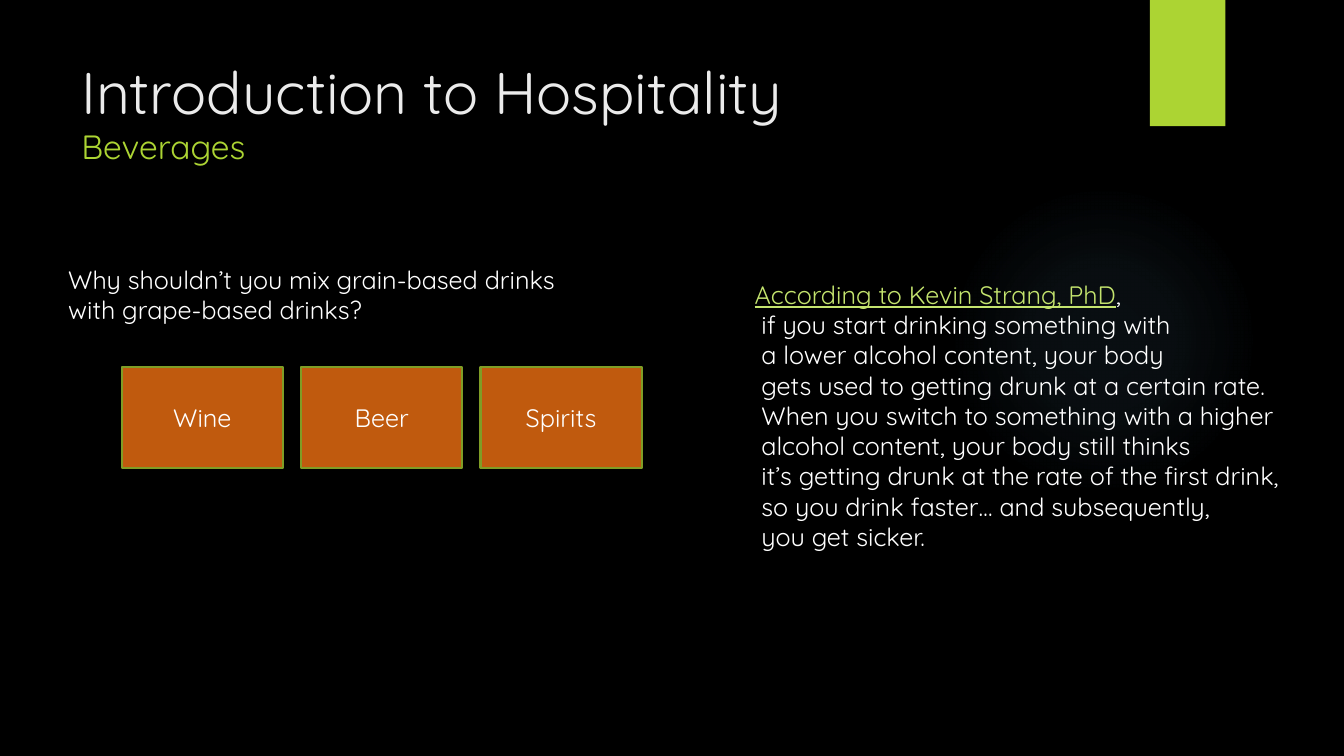
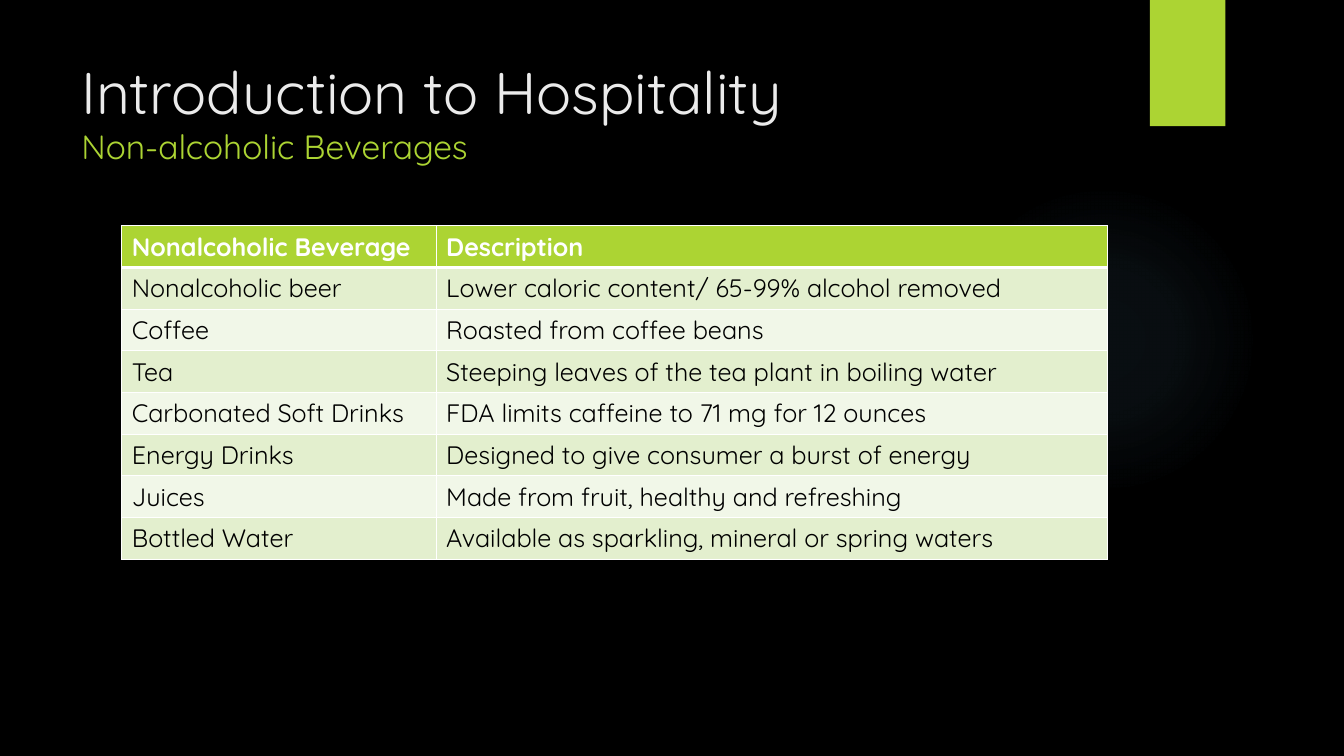
from lxml import etree
from pptx import Presentation
from pptx import util as u
from pptx.dml.color import RGBColor
from pptx.enum import shapes, text
from pptx.oxml import parse_xml
from pptx.oxml.ns import nsdecls, qn

# Shared look
FONT = "Quicksand"
BLACK, WHITE, TITLE = "000000", "FFFFFF", "EBEBEB"
GREEN, LINK, GLOW = "ACD433", "C4E46E", "7AC4F0"
ORANGE, OUTLINE = "C05A0E", "7F9D26"
BANDS = ["E3EFCE", "F1F7E8"]
BODY = 18

# Content
COURSE = "Introduction to Hospitality"
QUESTION = ["Why shouldn’t you mix grain-based drinks", "with grape-based drinks?"]
DRINKS = ["Wine", "Beer", "Spirits"]
SOURCE = "According to Kevin Strang, PhD"
ANSWER = [
    "if you start drinking something with",
    "a lower alcohol content, your body",
    "gets used to getting drunk at a certain rate.",
    "When you switch to something with a higher",
    "alcohol content, your body still thinks",
    "it’s getting drunk at the rate of the first drink,",
    "so you drink faster… and subsequently,",
    "you get sicker.",
]
BEVERAGES = [
    ("Nonalcoholic Beverage", "Description"),
    ("Nonalcoholic beer", "Lower caloric content/ 65-99% alcohol removed"),
    ("Coffee", "Roasted from coffee beans"),
    ("Tea", "Steeping leaves of the tea plant in boiling water"),
    ("Carbonated Soft Drinks", "FDA limits caffeine to 71 mg for 12 ounces"),
    ("Energy Drinks", "Designed to give consumer a burst of energy"),
    ("Juices", "Made from fruit, healthy and refreshing"),
    ("Bottled Water", "Available as sparkling, mineral or spring waters"),
]


def rgb(color):
    return RGBColor.from_string(color)


def cm(*lengths):
    return [u.Cm(length) for length in lengths]


def add_run(p, words, color=WHITE, size=BODY, bold=False, underline=False):
    r = p.add_run()
    r.text = words
    r.font.name, r.font.size = FONT, u.Pt(size)
    r.font.bold, r.font.underline = bold, underline
    r.font.color.rgb = rgb(color)


def add_text(s, *box):
    tf = s.shapes.add_textbox(*cm(*box)).text_frame
    tf.word_wrap = True
    return tf


def add_box(s, kind, box, fill=None, line=None):
    sp = s.shapes.add_shape(kind, *cm(*box))
    sp.shadow.inherit = False
    if fill:
        sp.fill.solid()
        sp.fill.fore_color.rgb = rgb(fill)
    if line:
        sp.line.color.rgb = rgb(line)
        sp.line.width = u.Pt(1.5)
    else:
        sp.line.fill.background()
    return sp


def add_glow(s):
    sp = add_box(s, shapes.MSO_SHAPE.OVAL, (23.9, 4.65, 7.82, 7.82))
    stops = "".join(
        f'<a:gs pos="{pos * 1000}"><a:srgbClr val="{GLOW}">'
        f'<a:alpha val="{alpha * 1000}"/></a:srgbClr></a:gs>'
        for pos, alpha in [(0, 7), (36, 6), (69, 0)])
    gradient = parse_xml(
        f'<a:gradFill {nsdecls("a")}><a:gsLst>{stops}</a:gsLst><a:path path="circle">'
        '<a:fillToRect l="50000" t="50000" r="50000" b="50000"/></a:path></a:gradFill>')
    sp.element.spPr.find(qn("a:prstGeom")).addnext(gradient)


def add_slide(prs, subtitle):
    s = prs.slides.add_slide(prs.slide_layouts[6])
    s.background.fill.solid()
    s.background.fill.fore_color.rgb = rgb(BLACK)
    add_glow(s)
    add_box(s, shapes.MSO_SHAPE.RECTANGLE, (28.98, 0, 1.9, 3.18), GREEN)
    p = add_text(s, 1.8, 1.27, 26.14, 3.89).paragraphs[0]
    add_run(p, COURSE, TITLE, 42)
    p.add_line_break()
    add_run(p, subtitle, GREEN, 24)
    return s


def set_borders(cell, top, bottom):
    tcPr = cell._tc.get_or_add_tcPr()
    for side, width in [("L", 1), ("R", 1), ("T", top), ("B", bottom)]:
        ln = etree.SubElement(tcPr, qn(f"a:ln{side}"), w=str(u.Pt(width)))
        fill = etree.SubElement(ln, qn("a:solidFill"))
        etree.SubElement(fill, qn("a:srgbClr"), val=WHITE)


def build_mixing(prs):
    s = add_slide(prs, "Beverages")

    # Row of drinks
    left, width, gap = 3.07, 4.06, 0.46
    for i, drink in enumerate(DRINKS):
        sp = add_box(s, shapes.MSO_SHAPE.RECTANGLE,
                     (left + i * (width + gap), 9.25, width, 2.54), ORANGE, OUTLINE)
        tf = sp.text_frame
        tf.vertical_anchor = text.MSO_ANCHOR.MIDDLE
        p = tf.paragraphs[0]
        p.alignment = text.PP_ALIGN.CENTER
        add_run(p, drink)

    # Answer, set in slightly below its source
    tf = add_text(s, 18.77, 6.91, 14.4, 7.19)
    add_run(tf.paragraphs[0], SOURCE, LINK, underline=True)
    add_run(tf.paragraphs[0], ",")
    for line in ANSWER:
        p = tf.add_paragraph()
        p._p.get_or_add_pPr().set("marL", str(u.Cm(0.17)))
        add_run(p, line)

    # Question
    tf = add_text(s, 1.47, 6.53, 13.31, 1.8)
    for i, line in enumerate(QUESTION):
        add_run(tf.add_paragraph() if i else tf.paragraphs[0], line)


def build_table(prs):
    s = add_slide(prs, "Non-alcoholic Beverages")
    widths, row_height = [7.92, 16.92], 1.05
    table = s.shapes.add_table(
        len(BEVERAGES), len(widths),
        *cm(3.07, 5.69, sum(widths), row_height * len(BEVERAGES))).table
    table.first_row = table.horz_banding = False
    for column, width in zip(table.columns, widths):
        column.width = u.Cm(width)
    for i, row in enumerate(BEVERAGES):
        header = i == 0
        table.rows[i].height = u.Cm(row_height)
        for j, words in enumerate(row):
            cell = table.cell(i, j)
            set_borders(cell, top=3 if i == 1 else 1, bottom=3 if header else 1)
            cell.fill.solid()
            cell.fill.fore_color.rgb = rgb(GREEN if header else BANDS[(i - 1) % 2])
            add_run(cell.text_frame.paragraphs[0], words,
                    WHITE if header else BLACK, bold=header)


def main():
    prs = Presentation()
    prs.slide_width, prs.slide_height = cm(33.87, 19.05)
    build_mixing(prs)
    build_table(prs)
    prs.save("out.pptx")


if __name__ == "__main__":
    main()
